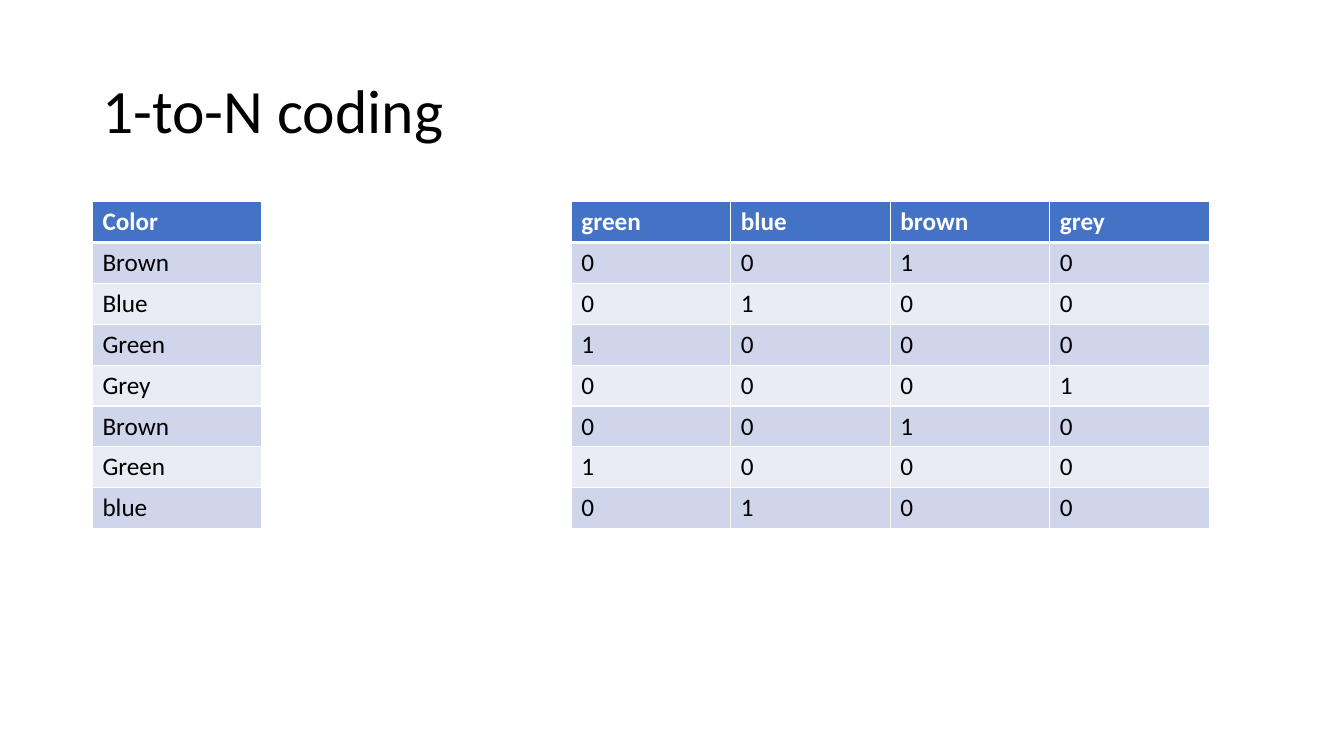
from dataclasses import dataclass

import pptx
import pptx.dml.color
import pptx.enum.text
import pptx.oxml
import pptx.oxml.ns
import pptx.slide
import pptx.table
import pptx.text.text
import pptx.util
from pptx.util import Cm


@dataclass(frozen=True)
class Theme:
    font: str = "Calibri"
    title_size: int = 44
    cell_size: int = 18
    text: str = "000000"
    header_text: str = "FFFFFF"
    header_fill: str = "4472C4"
    odd_fill: str = "CFD5EA"
    even_fill: str = "E9EBF5"
    border: str = "FFFFFF"
    thin_border: int = 1
    thick_border: int = 3


@dataclass(frozen=True)
class CodingTable:
    left: float
    column_width: float
    header: list[str]
    body: list[list[str]]


THEME = Theme()
TABLE_TOP = 5.08
ROW_HEIGHT = 1.03
COLORS = ["Brown", "Blue", "Green", "Grey", "Brown", "Green", "blue"]
CATEGORIES = ["green", "blue", "brown", "grey"]
TABLES = [
    CodingTable(2.33, 4.27, ["Color"], [[color] for color in COLORS]),
    CodingTable(
        14.4,
        4.02,
        CATEGORIES,
        [[str(int(color.lower() == category)) for category in CATEGORIES] for color in COLORS],
    ),
]


def add_run(
    paragraph: pptx.text.text._Paragraph, text: str, size: int, color: str, bold: bool = False
) -> None:
    run = paragraph.add_run()
    run.text = text
    run.font.name = THEME.font
    run.font.size = pptx.util.Pt(size)
    run.font.bold = bold
    run.font.color.rgb = pptx.dml.color.RGBColor.from_string(color)


def add_title(slide: pptx.slide.Slide, text: str) -> None:
    title = slide.shapes.add_textbox(Cm(2.33), Cm(1.01), Cm(29.21), Cm(3.68))
    frame = title.text_frame
    frame.word_wrap = True
    frame.vertical_anchor = pptx.enum.text.MSO_ANCHOR.MIDDLE
    paragraph = frame.paragraphs[0]
    paragraph.line_spacing = 0.9
    add_run(paragraph, text, THEME.title_size, THEME.text)


def set_borders(cell: pptx.table._Cell, row: int) -> None:
    """Draw thin borders, with a thick one between header and body."""
    widths = dict.fromkeys(("lnL", "lnR", "lnT", "lnB"), THEME.thin_border)
    if row == 0:
        widths["lnB"] = THEME.thick_border
    elif row == 1:
        widths["lnT"] = THEME.thick_border
    properties = cell._tc.get_or_add_tcPr()
    for side, width in widths.items():
        properties.append(
            pptx.oxml.parse_xml(
                f'<a:{side} {pptx.oxml.ns.nsdecls("a")} w="{pptx.util.Pt(width)}">'
                f'<a:solidFill><a:srgbClr val="{THEME.border}"/></a:solidFill></a:{side}>'
            )
        )


def fill_cell(cell: pptx.table._Cell, row: int, text: str) -> None:
    is_header = row == 0
    band = THEME.odd_fill if row % 2 else THEME.even_fill
    set_borders(cell, row)
    cell.fill.solid()
    cell.fill.fore_color.rgb = pptx.dml.color.RGBColor.from_string(
        THEME.header_fill if is_header else band
    )
    color = THEME.header_text if is_header else THEME.text
    add_run(cell.text_frame.paragraphs[0], text, THEME.cell_size, color, is_header)


def add_coding_table(slide: pptx.slide.Slide, coding: CodingTable) -> None:
    rows = [coding.header, *coding.body]
    column_count = len(coding.header)
    table = slide.shapes.add_table(
        len(rows),
        column_count,
        Cm(coding.left),
        Cm(TABLE_TOP),
        Cm(coding.column_width * column_count),
        Cm(ROW_HEIGHT * len(rows)),
    ).table
    for column in table.columns:
        column.width = Cm(coding.column_width)
    for row, texts in enumerate(rows):
        table.rows[row].height = Cm(ROW_HEIGHT)
        for column, text in enumerate(texts):
            fill_cell(table.cell(row, column), row, text)


def main() -> None:
    presentation = pptx.Presentation()
    presentation.slide_width = Cm(33.87)
    presentation.slide_height = Cm(19.05)
    slide = presentation.slides.add_slide(presentation.slide_layouts[6])
    add_title(slide, "1-to-N coding")
    for coding in TABLES:
        add_coding_table(slide, coding)
    presentation.save("out.pptx")


if __name__ == "__main__":
    main()
